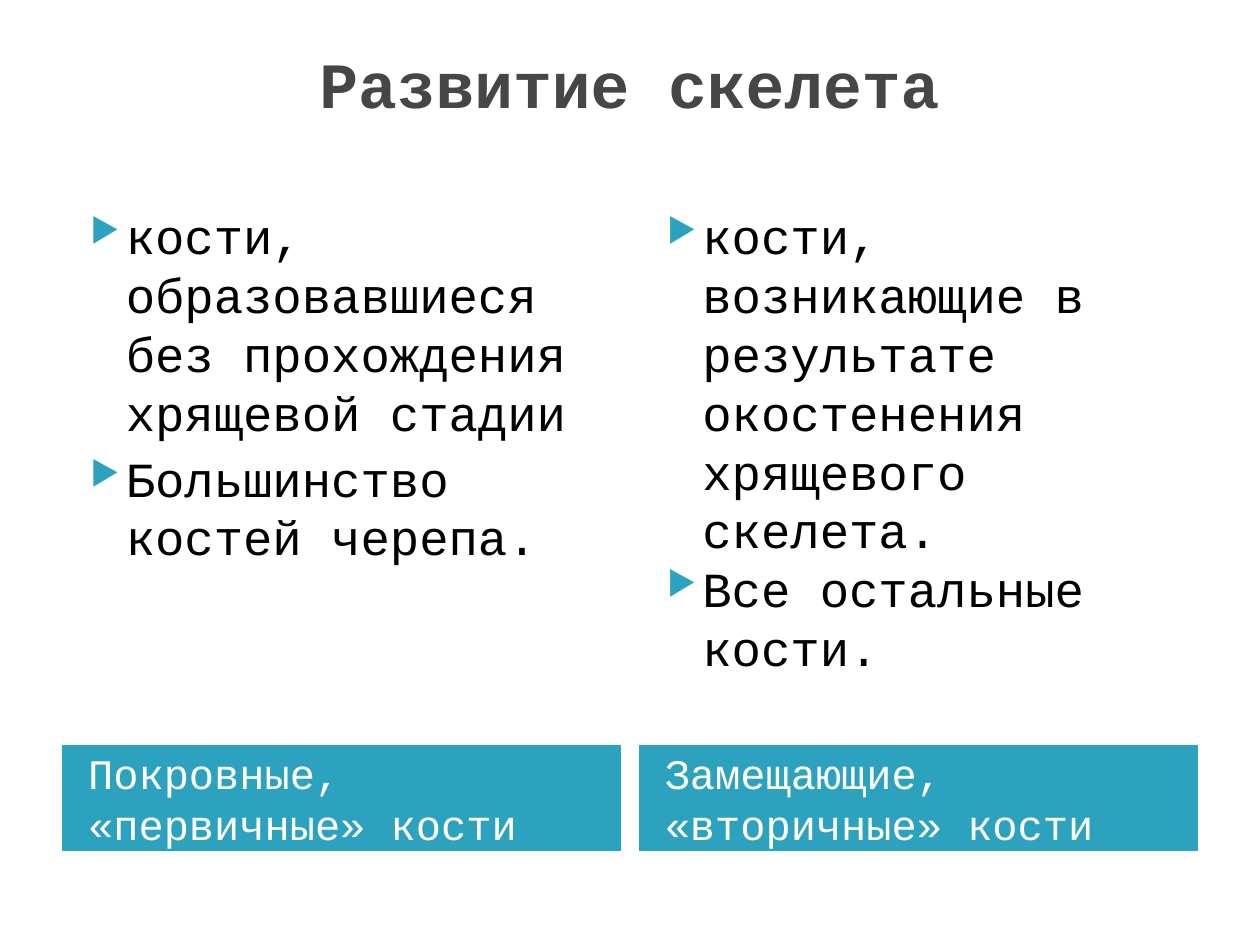
from dataclasses import dataclass

import lxml.etree
import pptx
import pptx.dml.color
import pptx.enum.shapes
import pptx.enum.text
import pptx.oxml.ns
import pptx.slide
import pptx.text.text
import pptx.util

Pt = pptx.util.Pt
RGBColor = pptx.dml.color.RGBColor
Anchor = pptx.enum.text.MSO_ANCHOR

TEAL = RGBColor(0x2D, 0xA2, 0xBF)
GREY = RGBColor(0x46, 0x46, 0x46)
BLACK = RGBColor(0x00, 0x00, 0x00)
WHITE = RGBColor(0xFF, 0xFF, 0xFF)

FONT = "Courier New"
MARGIN = 36
COLUMN_WIDTH = 318.5
COLUMN_STEP = 329.5


@dataclass
class Column:
    label: str
    points: list[str]
    gap: float


COLUMNS = [
    Column(
        "Покровные, «первичные» кости",
        [
            "кости, образовавшиеся без прохождения хрящевой стадии",
            "Большинство костей черепа.",
        ],
        4,
    ),
    Column(
        "Замещающие, «вторичные» кости",
        [
            "кости, возникающие в результате окостенения хрящевого скелета.",
            "Все остальные кости.",
        ],
        0,
    ),
]


def style(paragraph: pptx.text.text._Paragraph, size: float, color: RGBColor) -> None:
    paragraph.font.name = FONT
    paragraph.font.size = Pt(size)
    paragraph.font.color.rgb = color


def add_bullet(paragraph: pptx.text.text._Paragraph) -> None:
    properties = paragraph._p.get_or_add_pPr()
    properties.set("marL", str(Pt(28.8)))
    properties.set("indent", str(Pt(-20.16)))
    qualify = pptx.oxml.ns.qn
    color = lxml.etree.SubElement(properties, qualify("a:buClr"))
    lxml.etree.SubElement(color, qualify("a:srgbClr"), val=str(TEAL))
    lxml.etree.SubElement(properties, qualify("a:buSzPct"), val="68000")
    lxml.etree.SubElement(properties, qualify("a:buChar"), char="▶")


def add_title(slide: pptx.slide.Slide, text: str) -> None:
    box = slide.shapes.add_textbox(Pt(MARGIN), Pt(21.6), Pt(648), Pt(90))
    frame = box.text_frame
    frame.word_wrap = True
    frame.vertical_anchor = Anchor.TOP
    paragraph = frame.paragraphs[0]
    paragraph.text = text
    paragraph.alignment = pptx.enum.text.PP_ALIGN.CENTER
    style(paragraph, 36.9, GREY)
    paragraph.font.bold = True


def add_label(slide: pptx.slide.Slide, left: float, text: str) -> None:
    shape = slide.shapes.add_shape(
        pptx.enum.shapes.MSO_SHAPE.RECTANGLE,
        Pt(left), Pt(426), Pt(COLUMN_WIDTH), Pt(60),
    )
    shape.shadow.inherit = False
    shape.fill.solid()
    shape.fill.fore_color.rgb = TEAL
    shape.line.color.rgb = TEAL
    shape.line.width = Pt(0.75)
    frame = shape.text_frame
    frame.word_wrap = True
    frame.vertical_anchor = Anchor.MIDDLE
    frame.margin_left = Pt(14.4)
    paragraph = frame.paragraphs[0]
    paragraph.text = text
    paragraph.alignment = pptx.enum.text.PP_ALIGN.LEFT
    style(paragraph, 24, WHITE)


def add_points(slide: pptx.slide.Slide, left: float, column: Column) -> None:
    box = slide.shapes.add_textbox(Pt(left), Pt(114), Pt(COLUMN_WIDTH), Pt(310))
    frame = box.text_frame
    frame.word_wrap = True
    for index, point in enumerate(column.points):
        paragraph = frame.add_paragraph() if index else frame.paragraphs[0]
        paragraph.text = point
        add_bullet(paragraph)
        if index:
            paragraph.space_before = Pt(column.gap)
        style(paragraph, 28, BLACK)


def main() -> None:
    presentation = pptx.Presentation()
    presentation.slide_width = Pt(720)
    presentation.slide_height = Pt(540)
    slide = presentation.slides.add_slide(presentation.slide_layouts[6])
    add_title(slide, "Развитие скелета")
    for index, column in enumerate(COLUMNS):
        left = MARGIN + index * COLUMN_STEP
        add_label(slide, left, column.label)
        add_points(slide, left, column)
    presentation.save("out.pptx")


if __name__ == "__main__":
    main()
